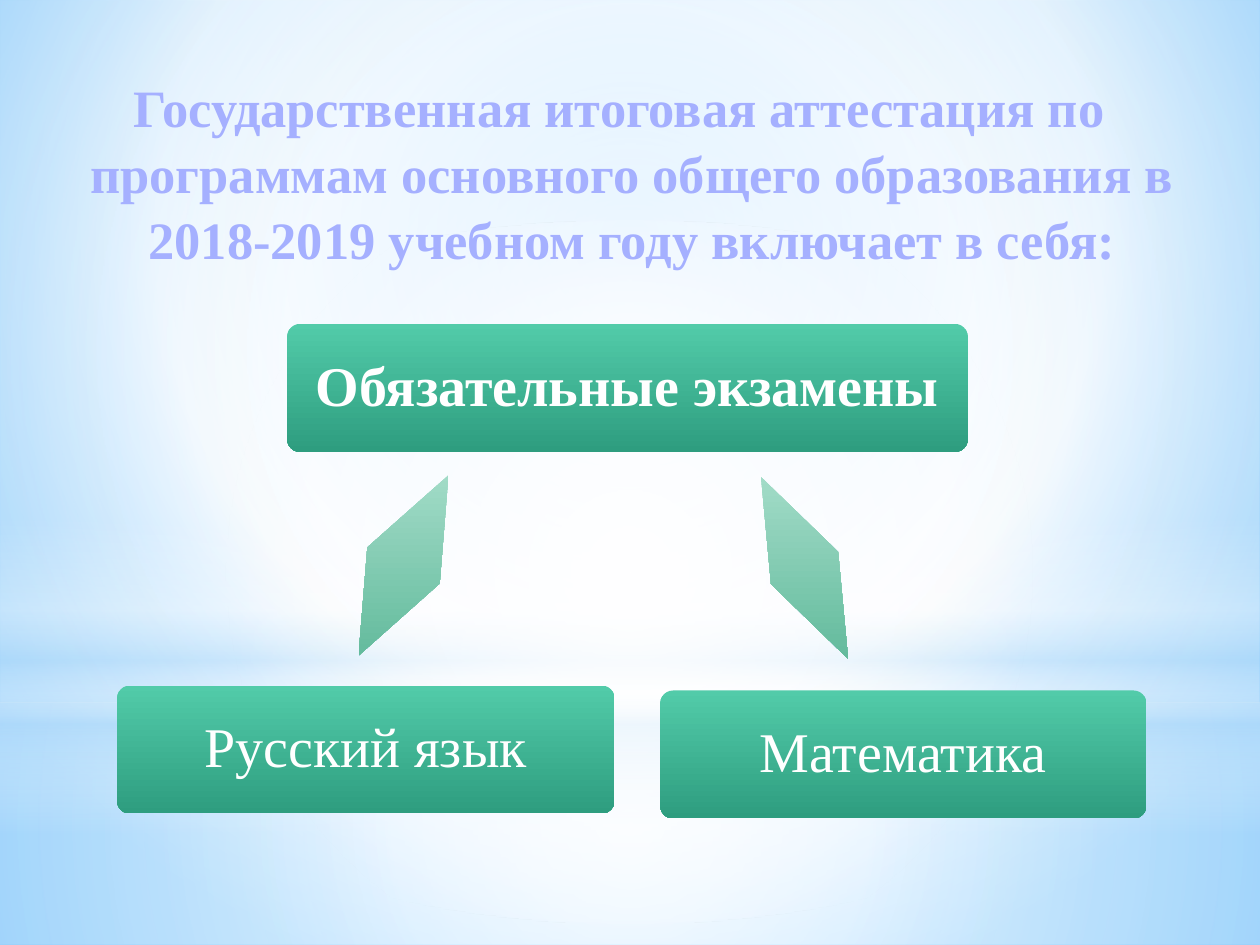
from dataclasses import dataclass

from pptx import Presentation
from pptx.dml.color import RGBColor
from pptx.enum.shapes import MSO_SHAPE
from pptx.enum.text import MSO_ANCHOR, MSO_AUTO_SIZE, PP_ALIGN
from pptx.oxml import parse_xml
from pptx.oxml.ns import nsdecls, qn
from pptx.util import Cm, Pt

RECT, OVAL = MSO_SHAPE.RECTANGLE, MSO_SHAPE.OVAL
ROUND, ARROW = MSO_SHAPE.ROUNDED_RECTANGLE, MSO_SHAPE.LEFT_RIGHT_ARROW
TOP, MIDDLE = MSO_ANCHOR.TOP, MSO_ANCHOR.MIDDLE
CENTER, NO_FIT = PP_ALIGN.CENTER, MSO_AUTO_SIZE.NONE


@dataclass(frozen=True)
class Theme:
    """Colours, gradients and type of the slide."""
    font: str = "Times New Roman"
    head: str = "A5B0FF"
    label: str = "FFFFFF"
    head_size: int = 30
    label_size: int = 32
    back: tuple = ((0, "9ED5FF", 100), (60, "FFFFFF", 100), (100, "5BB9FF", 100))
    floor: tuple = ((0, "FFFFFF", 91), (37, "FFFFFF", 76), (100, "B4DCFA", 79))
    wall: tuple = ((0, "FFFFFF", 89), (48, "FFFFFF", 62), (100, "B4DCFA", 79))
    band: tuple = ((0, "FFFFFF", 0), (29, "FFFFFF", 30), (45, "B4DCFA", 40),
                   (55, "FFFFFF", 26), (65, "B4DCFA", 60), (100, "FFFFFF", 0))
    glow: tuple = ((0, "FFFFFF", 100), (56, "FFFFFF", 0))
    box: tuple = ((0, "52CBA9", 100), (100, "2E9D7F", 100))
    arrow: tuple = ((0, "A7DECB", 100), (100, "5EB899", 100))


THEME = Theme()
MID = (50, 50, 50, 50)


def apply(item, values):
    """Set each attribute of item from a dict."""
    for name, value in values.items():
        setattr(item, name, value)


def paint(props, stops, focus=None):
    """Swap a solid fill for a gradient, round if a focus is given."""
    marks = "".join(
        f'<a:gs pos="{pos * 1000}"><a:srgbClr val="{color}">'
        f'<a:alpha val="{alpha * 1000}"/></a:srgbClr></a:gs>'
        for pos, color, alpha in stops)
    shade = '<a:lin ang="5400000" scaled="0"/>'
    if focus:
        sides = " ".join(f'{side}="{part * 1000}"' for side, part in zip("ltrb", focus))
        shade = f'<a:path path="circle"><a:fillToRect {sides}/></a:path>'
    fill = parse_xml(f'<a:gradFill {nsdecls("a")} rotWithShape="0">'
                     f'<a:gsLst>{marks}</a:gsLst>{shade}</a:gradFill>')
    props.replace(props.find(qn("a:solidFill")), fill)


def add_form(slide, kind, place, stops, focus=None, adjust=()):
    """Add a preset shape with a gradient and no line."""
    form = slide.shapes.add_shape(kind, *map(Cm, place))
    form.shadow.inherit = False
    form.line.fill.background()
    form.fill.solid()
    paint(form.element.spPr, stops, focus)
    for index, value in enumerate(adjust):
        form.adjustments[index] = value
    return form


def set_text(form, text, frame, para, font, color):
    """Write one formatted paragraph into a shape."""
    body = form.text_frame
    body.text = text
    apply(body, {"word_wrap": True, "auto_size": NO_FIT, **frame})
    line = body.paragraphs[0]
    apply(line, {"alignment": CENTER, **para})
    run = line.runs[0]
    apply(run.font, {"name": THEME.font, **font})
    run.font.color.rgb = RGBColor.from_string(color)
    return line


def add_box(slide, text, place, bold):
    """Add a labelled exam box."""
    box = add_form(slide, ROUND, place, THEME.box, adjust=(0.1,))
    edges = {f"margin_{side}": Cm(0.4) for side in ("left", "right", "top", "bottom")}
    set_text(box, text, {"vertical_anchor": MIDDLE, **edges}, {"line_spacing": 0.9},
             {"size": Pt(THEME.label_size), "bold": bold}, THEME.label)


def add_arrow(slide, place, turn):
    """Add a turned double arrow."""
    add_form(slide, ARROW, place, THEME.arrow, adjust=(0.6, 0.5)).rotation = turn


def add_scene(slide):
    """Paint the background and its layers of light."""
    slide.background.fill.solid()
    paint(slide.element.find(".//" + qn("p:bgPr")), THEME.back, (20, 10, 20, 60))
    for kind, place, stops, focus in (
            (RECT, (0, 14.17, 25.4, 4.88), THEME.floor, MID),
            (RECT, (0, 0, 25.4, 14.17), THEME.wall, MID),
            (RECT, (0, 10.46, 25.4, 6.35), THEME.band, None),
            (OVAL, (0, 4.45, 25.4, 14.17), THEME.glow, MID)):
        add_form(slide, kind, place, stops, focus)


def set_title(slide, text):
    """Place the heading above the layers of light."""
    title = slide.shapes.title
    slide.shapes.element.append(title.element)
    apply(title, dict(zip(("left", "top", "width", "height"),
                          map(Cm, (0.71, 1.32, 23.42, 15.37)))))
    line = set_text(title, text, {"vertical_anchor": TOP},
                    {"line_spacing": 1.05, "space_before": Pt(2), "space_after": Pt(3)},
                    {"size": Pt(THEME.head_size), "bold": True}, THEME.head)
    props = line._p.get_or_add_pPr()
    props.set("marL", str(Cm(0.64)))
    props.set("indent", str(Cm(-0.51)))


def main():
    """Build and save the slide."""
    deck = Presentation()
    apply(deck, {"slide_width": Cm(25.4), "slide_height": Cm(19.05)})
    slide = deck.slides.add_slide(deck.slide_layouts[5])
    add_scene(slide)
    set_title(slide, "Государственная итоговая аттестация по программам основного "
                     "общего образования в 2018-2019 учебном году включает в себя:")
    add_box(slide, "Обязательные экзамены", (5.79, 6.53, 13.72, 2.58), True)
    add_arrow(slide, (15.47, 9.42, 1.5, 4.06), 334.4)
    add_box(slide, "Математика", (13.31, 13.92, 9.8, 2.58), False)
    add_box(slide, "Русский язык", (2.36, 13.82, 10.03, 2.58), False)
    add_arrow(slide, (7.32, 9.37, 1.63, 4.06), 26.5)
    deck.save("out.pptx")


if __name__ == "__main__":
    main()
